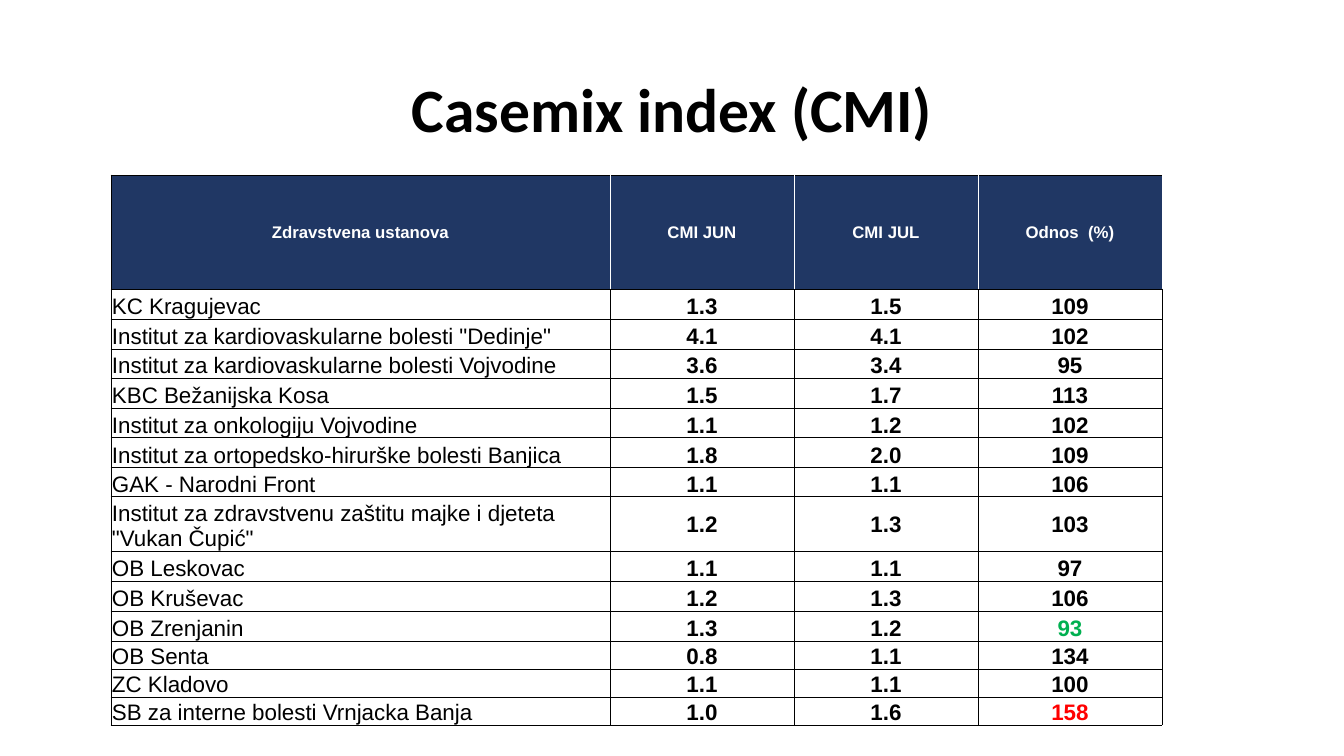
from pptx import Presentation
from pptx.dml.color import RGBColor as Rgb
from pptx.enum.text import MSO_ANCHOR as Anchor, PP_ALIGN as Align
from pptx.oxml.ns import qn
from pptx.util import Pt
from lxml.etree import SubElement as Sub

SCALE = 914400 / 100.8  # EMU in one px

INK = {
    "black": "000000",
    "white": "FFFFFF",
    "navy": "203764",
    "green": "00B050",
    "red": "FF0000",
}

HEAD = ("Zdravstvena ustanova", "CMI JUN", "CMI JUL", "Odnos  (%)")
ROWS = [
    ("KC Kragujevac", "1.3", "1.5", 109),
    ('Institut za kardiovaskularne bolesti "Dedinje"', "4.1", "4.1", 102),
    ("Institut za kardiovaskularne bolesti Vojvodine", "3.6", "3.4", 95),
    ("KBC Bežanijska Kosa", "1.5", "1.7", 113),
    ("Institut za onkologiju Vojvodine", "1.1", "1.2", 102),
    ("Institut za ortopedsko-hirurške bolesti Banjica", "1.8", "2.0", 109),
    ("GAK - Narodni Front", "1.1", "1.1", 106),
    ('Institut za zdravstvenu zaštitu majke i djeteta "Vukan Čupić"',
     "1.2", "1.3", 103),
    ("OB Leskovac", "1.1", "1.1", 97),
    ("OB Kruševac", "1.2", "1.3", 106),
    ("OB Zrenjanin", "1.3", "1.2", 93),
    ("OB Senta", "0.8", "1.1", 134),
    ("ZC Kladovo", "1.1", "1.1", 100),
    ("SB za interne bolesti Vrnjacka Banja", "1.0", "1.6", 158),
]
TALL = 7  # the row whose name takes two lines

WIDTHS = [499, 184, 184, 184]
HEIGHTS = [114, 30, 30, 29, 30, 30, 30, 29, 50, 30, 30, 30, 20, 20, 20]


def px(num):
    return round(num * SCALE)


def style(par, font, size, ink, bold, align):
    par.alignment = align
    for run in par.runs:
        run.font.name = font
        run.font.size = Pt(size)
        run.font.bold = bold
        run.font.color.rgb = Rgb.from_string(INK[ink])


def add_title(slide, text):
    box = slide.shapes.add_textbox(px(93), px(40), px(1159), px(146))
    frame = box.text_frame
    frame.word_wrap = True
    frame.vertical_anchor = Anchor.MIDDLE
    frame.text = text
    par = frame.paragraphs[0]
    par.line_spacing = 0.9
    style(par, "Calibri", 44, "black", True, Align.CENTER)


def add_edges(cell, inks):
    """Draw the cell borders: left, right, top, bottom."""
    props = cell._tc.get_or_add_tcPr()
    for side, ink in zip("LRTB", inks):
        line = Sub(props, qn("a:ln" + side), w=str(Pt(0.5)))
        fill = Sub(line, qn("a:solidFill"))
        Sub(fill, qn("a:srgbClr"), val=INK[ink])


def set_cell(cell, text, size, ink, bold, align, anchor, fill, edges):
    cell.margin_left = cell.margin_right = cell.margin_top = px(1)
    cell.margin_bottom = 0
    cell.vertical_anchor = anchor
    add_edges(cell, edges)
    cell.fill.solid()
    cell.fill.fore_color.rgb = Rgb.from_string(INK[fill])
    cell.text_frame.text = text
    style(cell.text_frame.paragraphs[0], "Arial", size, ink, bold, align)


def add_grid(slide):
    frame = slide.shapes.add_table(
        len(HEIGHTS), len(WIDTHS), px(111), px(175),
        px(sum(WIDTHS)), px(sum(HEIGHTS)))
    table = frame.table
    table.first_row = table.horz_banding = False
    for col, width in zip(table.columns, WIDTHS):
        col.width = px(width)
    for row, height in zip(table.rows, HEIGHTS):
        row.height = px(height)

    # Header row
    for c, text in enumerate(HEAD):
        left = "white" if c else "black"
        set_cell(table.cell(0, c), text, 12, "white", True, Align.CENTER,
                 Anchor.MIDDLE, "navy", (left, "white", "black", "black"))

    # Body rows, with the lowest and highest ratio in colour
    rates = [row[-1] for row in ROWS]
    marks = {min(rates): "green", max(rates): "red"}
    for r, row in enumerate(ROWS):
        for c, value in enumerate(row):
            mid = r == TALL and c > 0
            set_cell(table.cell(r + 1, c), str(value), 16,
                     marks.get(value, "black"), c > 0,
                     Align.CENTER if c else Align.LEFT,
                     Anchor.MIDDLE if mid else Anchor.BOTTOM,
                     "white", ["black"] * 4)


def main():
    deck = Presentation()
    deck.slide_width, deck.slide_height = px(1344), px(756)
    slide = deck.slides.add_slide(deck.slide_layouts[6])
    add_title(slide, "Casemix index (CMI)")
    add_grid(slide)
    deck.save("out.pptx")


if __name__ == "__main__":
    main()
